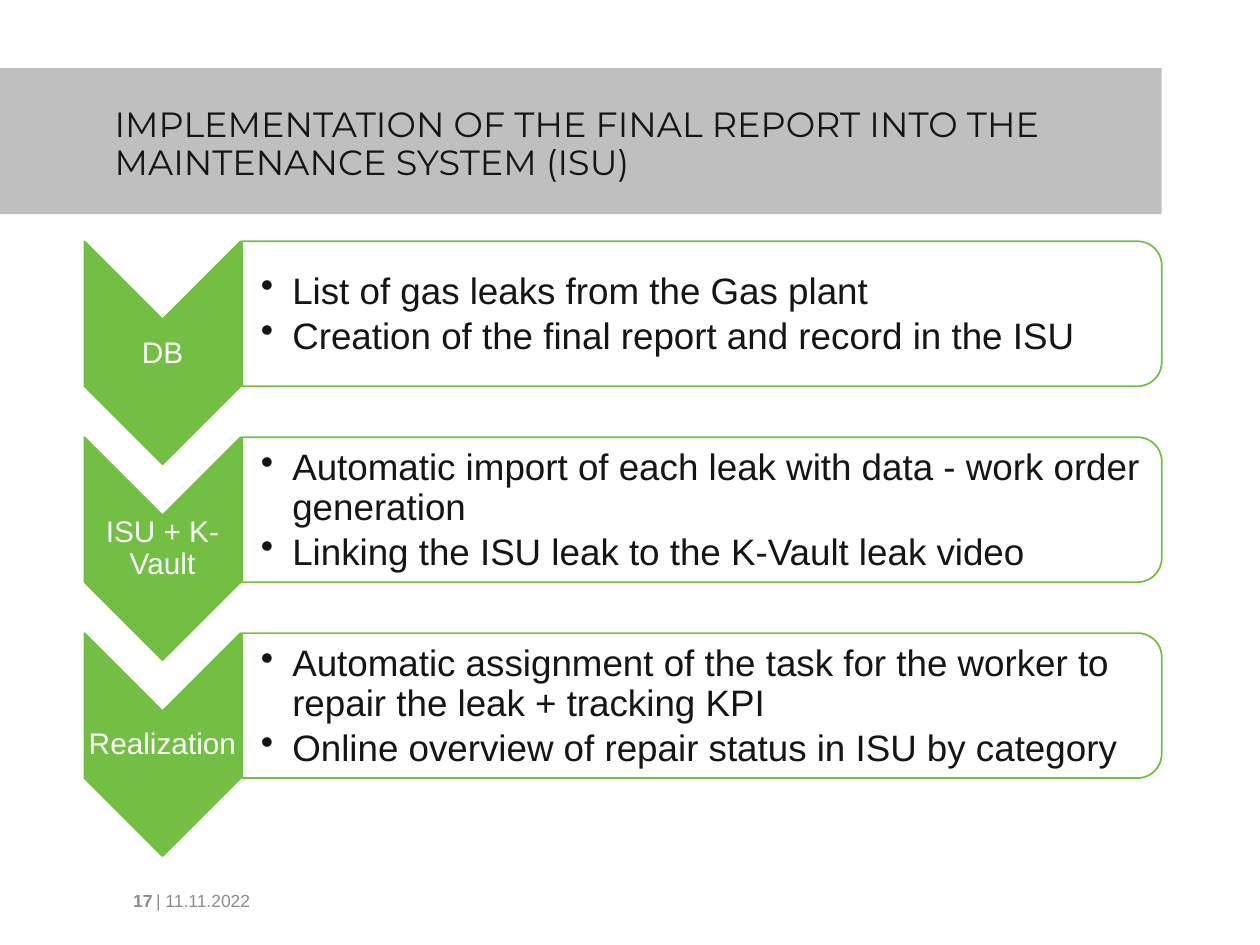
from pptx import Presentation
from pptx.dml.color import RGBColor
from pptx.enum import shapes, text
from pptx.oxml.ns import qn
from pptx.util import Inches, Pt
from lxml import etree

TITLE = "IMPLEMENTATION OF THE FINAL REPORT INTO THE MAINTENANCE SYSTEM (ISU)"
STEPS = [
    ("DB", ["List of gas leaks from the Gas plant",
            "Creation of the final report and record in the ISU"]),
    ("ISU + K-Vault", ["Automatic import of each leak with data - work order generation",
                       "Linking the ISU leak to the K-Vault leak video"]),
    ("Realization", ["Automatic assignment of the task for the worker to repair the leak + tracking KPI",
                     "Online overview of repair status in ISU by category"]),
]
FOOT = [("| 11.11.2022", 1.14, 2.25, {}),
        ("17", 0.81, 0.5, {"bold": True, "align": text.PP_ALIGN.RIGHT})]
COLORS = {"band": "BFBFBF", "ink": "151515", "green": "72BF44", "white": "FFFFFF", "gray": "8C8C8C"}
TOP, PITCH = 1.91, 1.555
TIGHT = (0.01, 0.01, 0.01, 0.01)
MIDDLE = text.MSO_ANCHOR.MIDDLE


def color(name):
    return RGBColor.from_string(COLORS[name])


def place(shape, *box):
    for key, val in zip(("left", "top", "width", "height"), box):
        setattr(shape, key, Inches(val))


def write(shape, lines, size, ink, face="Arial", bold=False, inset=(0.1, 0.05, 0.1, 0.05),
          anchor=MIDDLE, bullet=False, **para):
    frame = shape.text_frame
    frame.text = "\n".join(lines)
    sides = ("margin_left", "margin_top", "margin_right", "margin_bottom")
    form = dict(zip(sides, map(Inches, inset)), word_wrap=True,
                auto_size=text.MSO_AUTO_SIZE.NONE, vertical_anchor=anchor)
    for key, val in form.items():
        setattr(frame, key, val)
    for par in frame.paragraphs:
        for key, val in para.items():
            setattr(par, "alignment" if key == "align" else key, val)
        if bullet:
            props = par._p.get_or_add_pPr()
            props.set("marL", str(Inches(0.25)))
            props.set("indent", str(Inches(-0.25)))
            etree.SubElement(props, qn("a:buChar")).set("char", "•")
        for key, val in {"size": Pt(size), "name": face, "bold": bold}.items():
            setattr(par.font, key, val)
        par.font.color.rgb = color(ink)


def draw(slide, kind, fill, mid_x, mid_y, wide, high):
    box = (mid_x - wide / 2, mid_y - high / 2, wide, high)
    shape = slide.shapes.add_shape(kind, *map(Inches, box))
    shape.rotation = 90
    shape.shadow.inherit = False
    shape.fill.solid()
    shape.fill.fore_color.rgb = color(fill)
    shape.line.color.rgb = color("green")
    shape.line.width = Pt(1)
    return shape


def label(slide, box, lines, **form):
    write(slide.shapes.add_textbox(*map(Inches, box)), lines, **form)


def main():
    """Build the slide with a title band and three chevron steps."""
    deck = Presentation()
    deck.slide_width, deck.slide_height = Inches(10), Inches(7.5)
    slide = deck.slides.add_slide(deck.slide_layouts[5])
    title = slide.shapes.title
    place(title, 0, 0.54, 9.22, 1.16)
    title.fill.solid()
    title.fill.fore_color.rgb = color("band")
    write(title, [TITLE], 20, "ink", "Montserrat", inset=(0.91, 0.31, 0.1, 0.24),
          anchor=text.MSO_ANCHOR.TOP, align=text.PP_ALIGN.LEFT, line_spacing=0.9)

    for line, left, wide, form in FOOT:
        label(slide, (left, 6.95, wide, 0.4), [line], size=10, ink="gray", **form)

    for row, (name, points) in enumerate(STEPS):
        top = TOP + row * PITCH
        draw(slide, shapes.MSO_SHAPE.CHEVRON, "green", 1.29, top + 0.89, 1.77, 1.24)
        label(slide, (0.67, top + 0.63, 1.24, 0.53), [name], size=17, ink="white", inset=TIGHT,
              align=text.PP_ALIGN.CENTER, line_spacing=0.9, space_after=Pt(6))
        draw(slide, shapes.MSO_SHAPE.ROUND_2_SAME_RECTANGLE, "white", 5.57, top + 0.58, 1.15, 7.3)
        label(slide, (1.91, top + 0.07, 7.25, 1.04), points, size=21, ink="ink", bullet=True,
              inset=(0.16, 0.01, 0.01, 0.01), line_spacing=0.9, space_after=Pt(3))
    deck.save("out.pptx")


if __name__ == "__main__":
    main()
